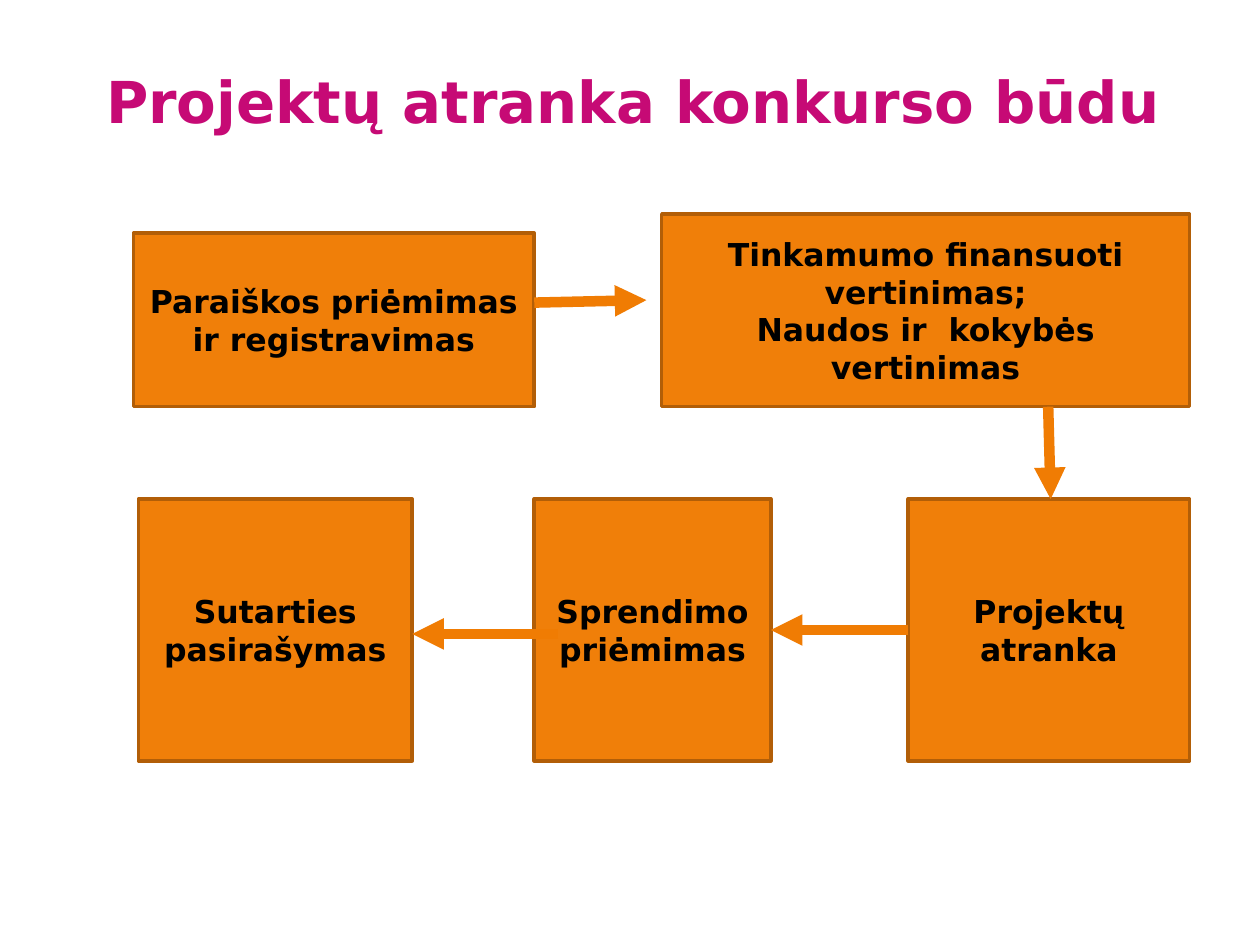
from dataclasses import dataclass

import pptx
import pptx.dml.color
import pptx.enum.shapes
import pptx.enum.text
import pptx.oxml
import pptx.oxml.ns
import pptx.slide
import pptx.text.text
import pptx.util
from pptx.dml.color import RGBColor
from pptx.util import Cm

FONT = "DejaVu Sans"
MAGENTA = RGBColor(0xC6, 0x0A, 0x75)
ORANGE = RGBColor(0xF0, 0x7F, 0x09)
BROWN = RGBColor(0xB2, 0x5E, 0x07)
ARROW_ORANGE = RGBColor(0xF0, 0x7C, 0x03)
BLACK = RGBColor(0, 0, 0)

# Edges shared by boxes and arrows, in centimetres
RIGHT_EDGE = 23.98
UPPER_BOTTOM = 8.2
LOWER_TOP = 10.06
LOWER_HEIGHT = 5.28
LOWER_MIDDLE = LOWER_TOP + LOWER_HEIGHT / 2


@dataclass(frozen=True)
class Step:
    lines: tuple[str, ...]
    left: float
    top: float
    right: float
    bottom: float


@dataclass(frozen=True)
class Arrow:
    start: tuple[float, float]
    end: tuple[float, float]


def lower_step(text: str, left: float, right: float) -> Step:
    return Step((text,), left, LOWER_TOP, right, LOWER_TOP + LOWER_HEIGHT)


APPLICATION = Step(("Paraiškos priėmimas ir registravimas",),
                   2.69, 4.7, 10.77, UPPER_BOTTOM)
EVALUATION = Step(("Tinkamumo finansuoti vertinimas;",
                   "Naudos ir  kokybės vertinimas"),
                  13.34, 4.32, RIGHT_EDGE, UPPER_BOTTOM)
SELECTION = lower_step("Projektų atranka", 18.31, RIGHT_EDGE)
DECISION = lower_step("Sprendimo priėmimas", 10.77, 15.54)
CONTRACT = lower_step("Sutarties pasirašymas", 2.79, 8.31)
STEPS = (APPLICATION, EVALUATION, SELECTION, DECISION, CONTRACT)

ARROWS = (
    Arrow((APPLICATION.right, 6.1), (13.03, 6.05)),
    Arrow((21.13, UPPER_BOTTOM), (21.18, LOWER_TOP)),
    Arrow((SELECTION.left, LOWER_MIDDLE), (DECISION.right, LOWER_MIDDLE)),
    Arrow((11.25, 12.78), (CONTRACT.right, 12.78)),
)


def write_lines(frame: pptx.text.text.TextFrame, lines: tuple[str, ...],
                size: float, color: RGBColor) -> None:
    frame.word_wrap = True
    for index, line in enumerate(lines):
        para = frame.add_paragraph() if index else frame.paragraphs[0]
        para.text = line
        para.alignment = pptx.enum.text.PP_ALIGN.CENTER
        para.font.name = FONT
        para.font.size = pptx.util.Pt(size)
        para.font.bold = True
        para.font.color.rgb = color


def add_title(page: pptx.slide.Slide, text: str) -> None:
    box = page.shapes.add_textbox(Cm(0.74), Cm(1.09), Cm(24.05), Cm(2.21))
    box.text_frame.margin_top = Cm(0.23)
    write_lines(box.text_frame, (text,), 33, MAGENTA)


def add_step(page: pptx.slide.Slide, step: Step) -> None:
    box = page.shapes.add_shape(
        pptx.enum.shapes.MSO_SHAPE.RECTANGLE, Cm(step.left), Cm(step.top),
        Cm(step.right - step.left), Cm(step.bottom - step.top))
    box.shadow.inherit = False
    box.fill.solid()
    box.fill.fore_color.rgb = ORANGE
    box.line.color.rgb = BROWN
    box.line.width = pptx.util.Pt(2)
    box.text_frame.vertical_anchor = pptx.enum.text.MSO_ANCHOR.MIDDLE
    write_lines(box.text_frame, step.lines, 18, BLACK)


def add_arrow(page: pptx.slide.Slide, arrow: Arrow) -> None:
    line = page.shapes.add_connector(
        pptx.enum.shapes.MSO_CONNECTOR.STRAIGHT,
        *map(Cm, arrow.start), *map(Cm, arrow.end))
    line.line.color.rgb = ARROW_ORANGE
    line.line.width = pptx.util.Pt(6)
    head = pptx.oxml.parse_xml(
        f'<a:tailEnd {pptx.oxml.ns.nsdecls("a")} type="triangle"/>')
    line.line._get_or_add_ln().append(head)
    line._element.spPr.append(pptx.oxml.parse_xml(
        f'<a:effectLst {pptx.oxml.ns.nsdecls("a")}/>'))


def main() -> None:
    deck = pptx.Presentation()
    deck.slide_width, deck.slide_height = Cm(25.4), Cm(19.05)
    page = deck.slides.add_slide(deck.slide_layouts[6])
    add_title(page, "Projektų atranka konkurso būdu")
    for step in STEPS:
        add_step(page, step)
    for arrow in ARROWS:
        add_arrow(page, arrow)
    deck.save("out.pptx")


if __name__ == "__main__":
    main()
